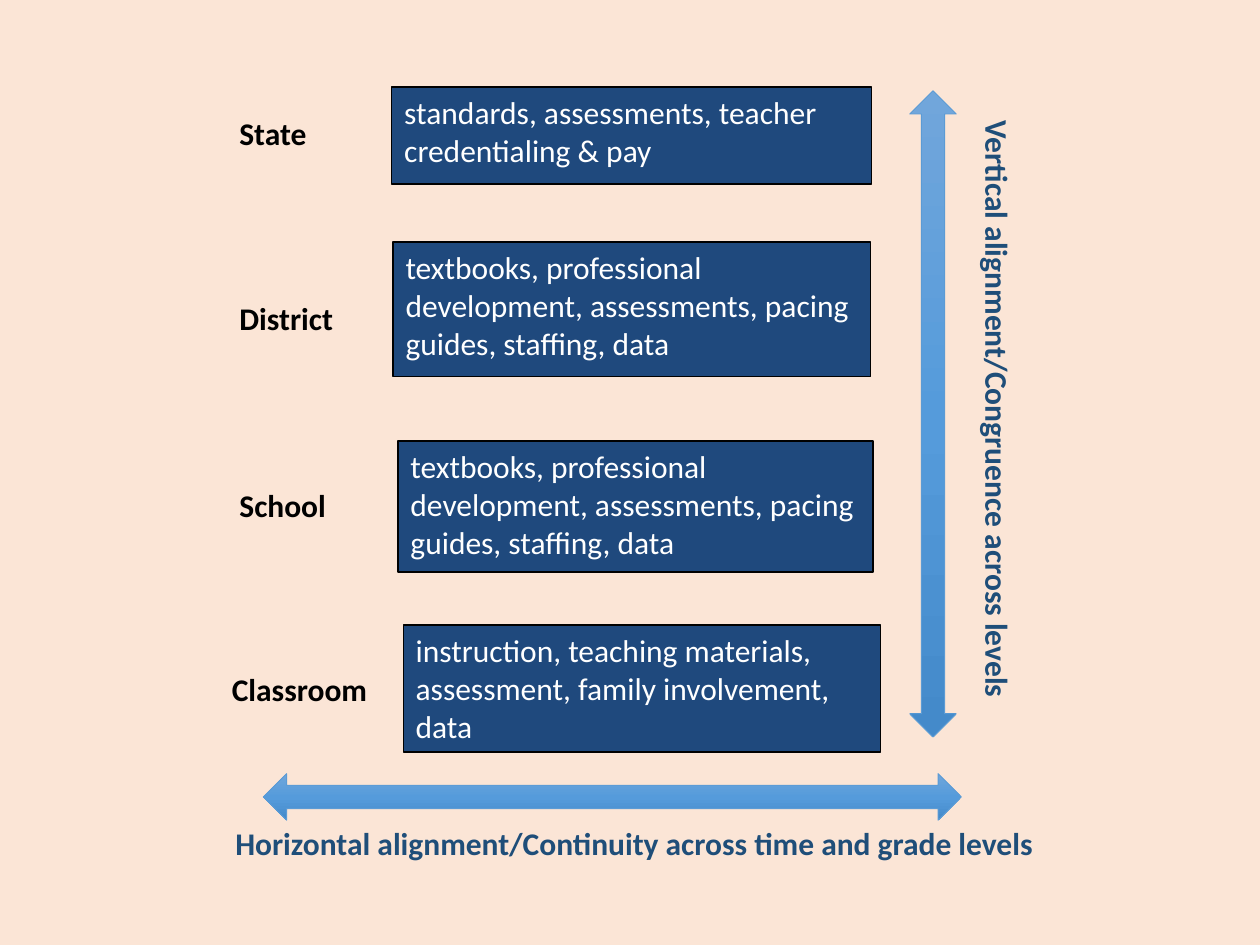
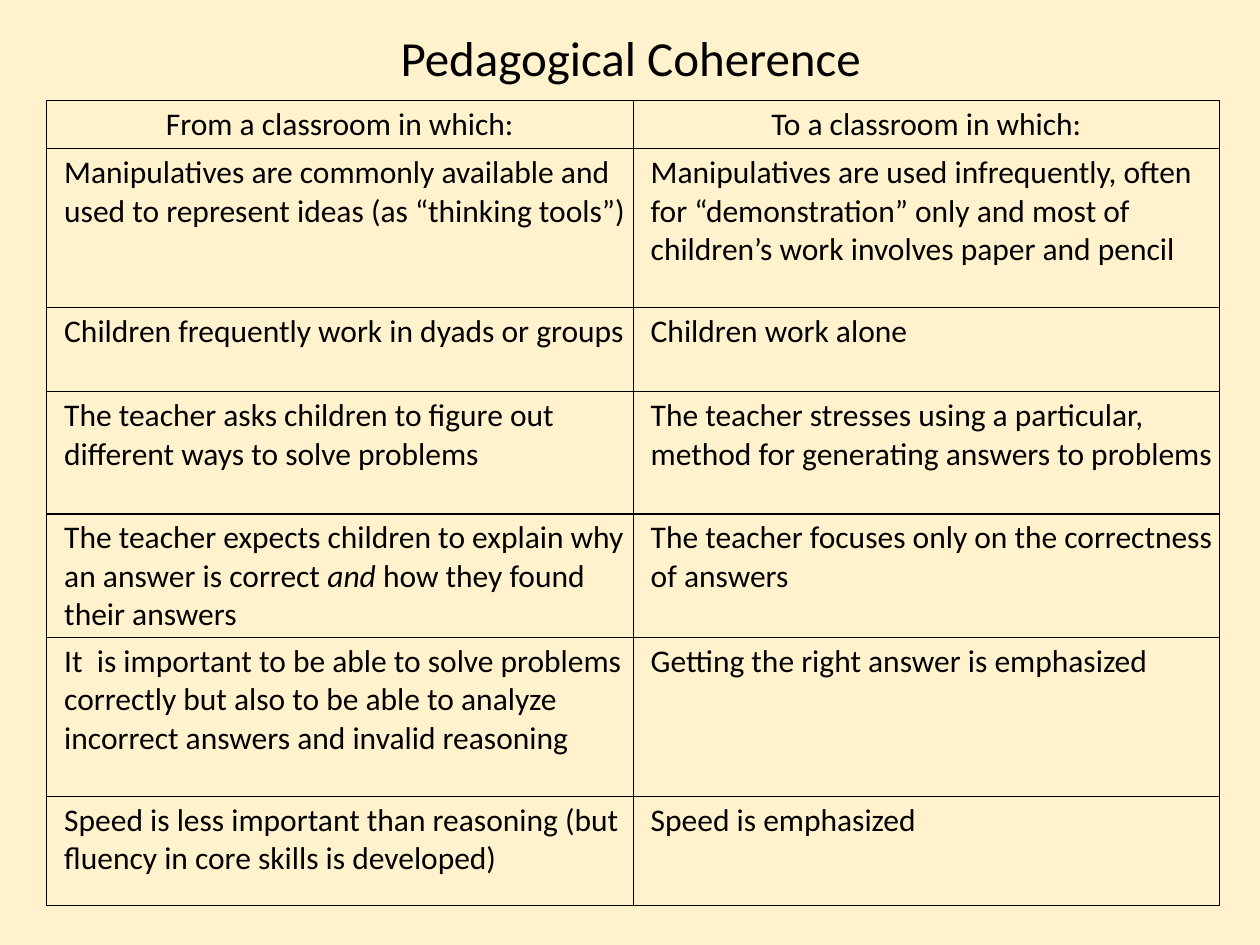
from lxml import etree
from copy import deepcopy
from pptx import Presentation
from pptx.dml.color import RGBColor
from pptx.enum.shapes import MSO_SHAPE as SHAPE
from pptx.enum.text import MSO_ANCHOR as ANCHOR, MSO_AUTO_SIZE as AUTO, PP_ALIGN as ALIGN
from pptx.oxml.ns import qn
from pptx.util import Inches, Pt

FONT = "Calibri"
COLORS = {
    "peach": "FBE5D6", "cream": "FFF2CC", "black": "000000", "white": "FFFFFF",
    "navy": "1F497D", "caption": "1F4E79", "arrow_line": "5B9BD5",
    "arrow_top": "71A6DB", "arrow_mid": "559BDB", "arrow_end": "448ACA",
}
TEXT_X = 1.9
LEVELS = [
    ("State", (1.42, 0.86, 1.5, 0.53), TEXT_X,
     "standards, assessments, teacher credentialing & pay", (3.11, 0.69, 3.81, 0.77)),
    ("District", (1.46, 2.32, 1.58, 0.38), TEXT_X,
     "textbooks, professional development, assessments, pacing guides, staffing, data",
     (3.12, 1.92, 3.79, 1.07)),
    ("School", (1.4, 3.81, 1.71, 0.51), TEXT_X,
     "textbooks, professional development, assessments, pacing guides, staffing, data",
     (3.16, 3.5, 3.77, 1.04)),
    ("Classroom", (1.4, 5.27, 1.67, 0.46), 1.84,
     "instruction, teaching materials, assessment, family involvement, data",
     (3.2, 4.96, 3.79, 1.01)),
]
HEADERS = ("From a classroom in which:", "To a classroom in which:")
PRACTICES = [
    (1.26, "Manipulatives are commonly available and used to represent ideas (as “thinking tools”)",
     "Manipulatives are used infrequently, often for “demonstration” only and most of "
     "children’s work involves paper and pencil"),
    (0.67, "Children frequently work in dyads or groups", "Children work alone"),
    (0.97, "The teacher asks children to figure out different ways to solve problems",
     "The teacher stresses using a particular, method for generating answers to problems"),
    (0.97, "The teacher expects children to explain why an answer is correct *and *how they "
     "found their answers", "The teacher focuses only on the correctness of answers"),
    (1.26, "It  is important to be able to solve problems correctly but also to be able to "
     "analyze incorrect answers and invalid reasoning", "Getting the right answer is emphasized"),
    (0.87, "Speed is less important than reasoning (but fluency in core skills is developed)",
     "Speed is emphasized"),
]


def rgb(name):
    """Return the named colour."""
    return RGBColor.from_string(COLORS[name])


def inches(box):
    """Convert left, top, width and height to lengths."""
    return [Inches(v) for v in box]


def write(tf, text, size=18, color="black", bold=False, align=ALIGN.LEFT, space=0, indent=0):
    """Write one paragraph, with the parts between asterisks in italics."""
    p = tf.paragraphs[0]
    p.alignment = align
    p.space_before = p.space_after = Pt(space)
    if indent:
        p._p.get_or_add_pPr().set("marL", str(Inches(indent)))
    for i, part in enumerate(text.split("*")):
        r = p.add_run()
        r.text = part
        r.font.name, r.font.size, r.font.bold = FONT, Pt(size), bold
        r.font.italic = i % 2 == 1
        r.font.color.rgb = rgb(color)


def add_slide(prs, background):
    """Add a blank slide with a plain background."""
    s = prs.slides.add_slide(prs.slide_layouts[6])
    s.background.fill.solid()
    s.background.fill.fore_color.rgb = rgb(background)
    return s


def add_text(s, box, text, inset=0.1, wrap=True, vertical=False, **fmt):
    """Add a text box and return its text frame."""
    tf = s.shapes.add_textbox(*inches(box)).text_frame
    tf.word_wrap = wrap
    tf.margin_left = Inches(inset)
    if vertical:
        tf._txBody.bodyPr.set("vert", "eaVert")
    write(tf, text, **fmt)
    return tf


def add_shape(s, kind, box, line, width):
    """Add an outlined shape without a shadow."""
    sp = s.shapes.add_shape(kind, *inches(box))
    sp.shadow.inherit = False
    sp.line.color.rgb = rgb(line)
    sp.line.width = Pt(width)
    return sp


def add_level_box(s, box, text):
    """Add a navy box describing one level."""
    sp = add_shape(s, SHAPE.RECTANGLE, box, "black", 0.75)
    sp.fill.solid()
    sp.fill.fore_color.rgb = rgb("navy")
    sp.text_frame.vertical_anchor = ANCHOR.TOP
    write(sp.text_frame, text, color="white")


def add_arrow(s, kind, box):
    """Add a double arrow with a three-stop gradient."""
    sp = add_shape(s, kind, box, "arrow_line", 0.5)
    sp.fill.gradient()
    sp.fill.gradient_angle = 270
    first = sp.fill.gradient_stops[0]._gs
    first.addnext(deepcopy(first))
    names = ("arrow_top", "arrow_mid", "arrow_end")
    for stop, name, position in zip(sp.fill.gradient_stops, names, (0, 0.5, 1)):
        stop.color.rgb = rgb(name)
        stop.position = position


def add_borders(cell):
    """Draw thin black borders round a cell."""
    tc_pr = cell._tc.get_or_add_tcPr()
    for i, side in enumerate(("a:lnL", "a:lnR", "a:lnT", "a:lnB")):
        ln = etree.Element(qn(side), w=str(Pt(0.75)))
        fill = etree.SubElement(ln, qn("a:solidFill"))
        etree.SubElement(fill, qn("a:srgbClr"), val=COLORS["black"])
        tc_pr.insert(i, ln)


def add_table(s, box, header_height, headers, rows):
    """Add a two-column comparison table."""
    table = s.shapes.add_table(len(rows) + 1, len(headers), *inches(box)).table
    table.first_row = table.horz_banding = False
    for i, (height, *texts) in enumerate([(header_height, *headers), *rows]):
        table.rows[i].height = Inches(height)
        fmt = {"indent": 0.1} if i else {"align": ALIGN.CENTER, "space": 6}
        for j, text in enumerate(texts):
            cell = table.cell(i, j)
            cell.margin_left = cell.margin_right = Inches(0.04)
            cell.margin_top = cell.margin_bottom = Inches(0.04)
            cell.fill.background()
            add_borders(cell)
            write(cell.text_frame, text, **fmt)


def build_alignment(prs):
    """Build the slide on alignment across levels."""
    s = add_slide(prs, "peach")
    for label, label_box, text_x, text, box in LEVELS:
        add_text(s, label_box, label, inset=text_x - label_box[0], bold=True)
        add_level_box(s, box, text)
    caption = {"color": "caption", "bold": True}
    add_text(s, (1.07, 6.49, 7.93, 0.82),
             "Horizontal alignment/Continuity across time and grade levels",
             align=ALIGN.CENTER, **caption)
    add_text(s, (7.64, 0.86, 0.48, 4.78), "Vertical alignment/Congruence across levels",
             vertical=True, **caption)
    add_arrow(s, SHAPE.LEFT_RIGHT_ARROW, (2.09, 6.14, 5.54, 0.37))
    add_arrow(s, SHAPE.UP_DOWN_ARROW, (7.22, 0.72, 0.37, 5.13))


def build_coherence(prs):
    """Build the slide comparing classrooms."""
    s = add_slide(prs, "cream")
    add_table(s, (0.37, 0.8, 9.31, 6.38), 0.38, HEADERS, PRACTICES)
    tf = add_text(s, (3.06, 0.17, 3.89, 0.57), "Pedagogical Coherence",
                  wrap=False, size=28, align=ALIGN.CENTER)
    tf.auto_size = AUTO.SHAPE_TO_FIT_TEXT


def main():
    """Build and save the presentation."""
    prs = Presentation()
    prs.slide_width, prs.slide_height = Inches(10), Inches(7.5)
    build_alignment(prs)
    build_coherence(prs)
    prs.save("out.pptx")


if __name__ == "__main__":
    main()
